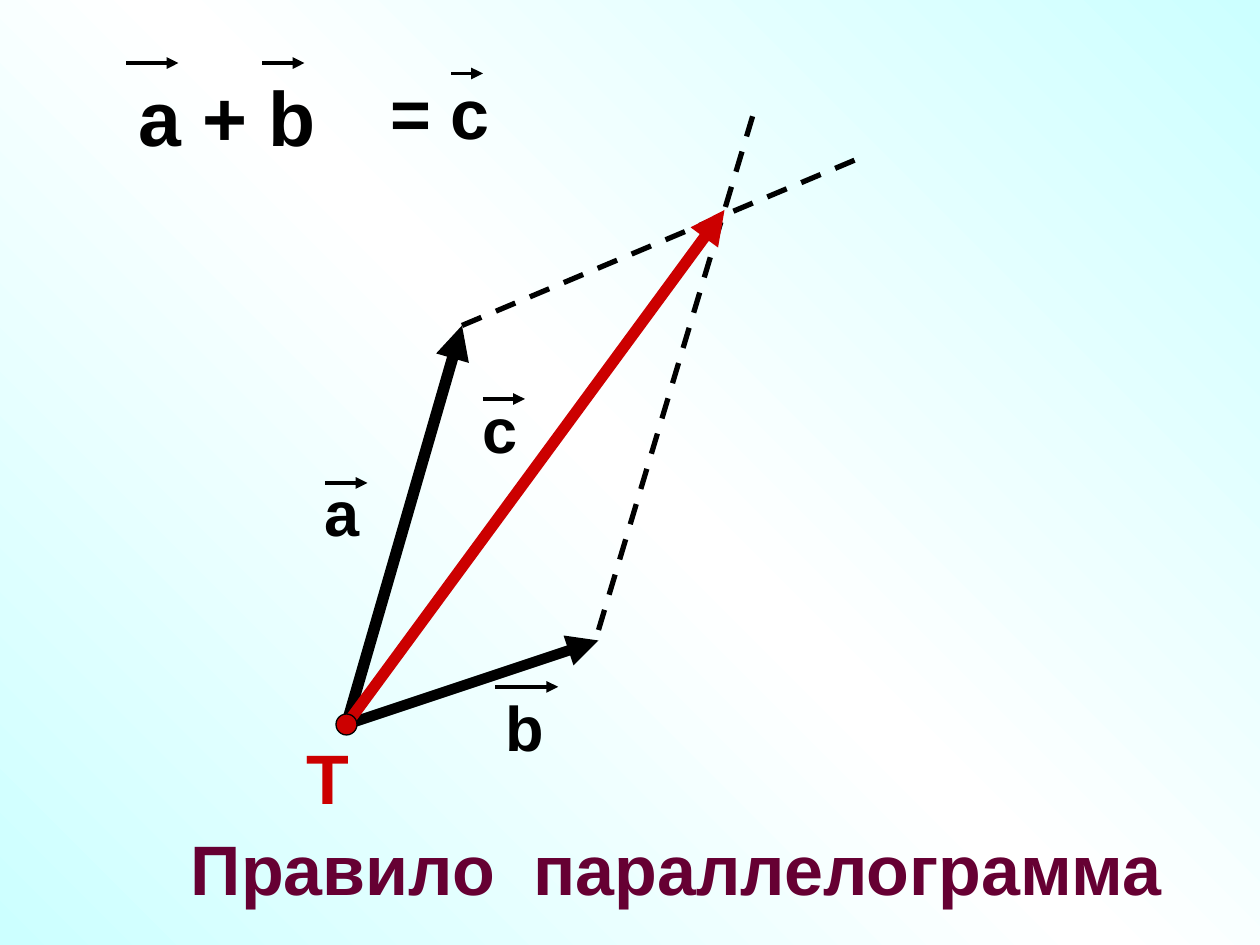
from copy import deepcopy

from lxml import etree
from pptx import Presentation
from pptx.dml.color import RGBColor
from pptx.enum.dml import MSO_LINE
from pptx.enum.shapes import MSO_CONNECTOR, MSO_SHAPE
from pptx.enum.text import MSO_AUTO_SIZE
from pptx.oxml.ns import qn
from pptx.util import Pt

STRAIGHT = MSO_CONNECTOR.STRAIGHT
OVAL = MSO_SHAPE.OVAL
DASH = MSO_LINE.DASH
GROW = MSO_AUTO_SIZE.SHAPE_TO_FIT_TEXT
HUES = {"ink": "000000", "red": "CC0000", "wine": "660033",
        "aqua": "CCFFFF", "white": "FFFFFF"}


def tint(name):
    """Return the named colour."""
    return RGBColor.from_string(HUES[name])


def paint(slide):
    """Fill the background with a diagonal three-stop gradient."""
    fill = slide.background.fill
    fill.gradient()
    fill.gradient_angle = 45
    last = fill.gradient_stops[1]
    stops = fill.gradient_stops[0]._gs.getparent()
    stops.append(deepcopy(last._gs))
    for stop, (place, hue) in zip(
            fill.gradient_stops, [(0, "aqua"), (0.5, "white"), (1, "aqua")]):
        stop.position = place
        stop.color.rgb = tint(hue)


def write(shapes, text, box, size=36, hue="ink"):
    """Place one line of bold text in a box."""
    shape = shapes.add_textbox(*map(Pt, box))
    frame = shape.text_frame
    frame.word_wrap = False
    frame.auto_size = GROW
    run = frame.paragraphs[0].add_run()
    run.text = text
    font = run.font
    font.name, font.size, font.bold = "Arial", Pt(size), True
    font.color.rgb = tint(hue)


def rule(shapes, start, end, width=2.25, hue="ink", dash=None, head=True):
    """Draw a straight line, dashed or with an arrowhead."""
    line = shapes.add_connector(STRAIGHT, *map(Pt, (*start, *end)))
    line.line.width = Pt(width)
    line.line.color.rgb = tint(hue)
    if dash:
        line.line.dash_style = dash
    if head:
        etree.SubElement(line.line._get_or_add_ln(), qn("a:tailEnd"), type="triangle")
    etree.SubElement(line._element.spPr, qn("a:effectLst"))


def label(slide, text, box, bars, size=36):
    """Group a text with vector bars given as offset and length in its box."""
    shapes = slide.shapes.add_group_shape().shapes
    write(shapes, text, box, size=size)
    left, top = box[:2]
    for x, y, length in bars:
        rule(shapes, (left + x, top + y), (left + x + length, top + y))


def figure(slide, left, top):
    """Draw the parallelogram of vectors around its origin T."""
    shapes = slide.shapes

    def at(x, y):
        """Shift a point to the origin."""
        return left + x, top + y

    rule(shapes, at(0, 0), at(66, -228), width=6.5)
    rule(shapes, at(0, 0), at(144, -48), width=6)
    for start, end in [((66, -228), (294, -324)), ((144, -54), (234, -354))]:
        rule(shapes, at(*start), at(*end), width=3, dash=DASH, head=False)
    rule(shapes, at(0, 0), at(216, -294), width=6.5, hue="red")
    write(shapes, "T", (*at(-30, 2), 39, 55.5), size=40, hue="red")
    dot = shapes.add_shape(OVAL, *map(Pt, (*at(-6, -6), 12, 12)))
    dot.shadow.inherit = False
    dot.fill.solid()
    dot.fill.fore_color.rgb = tint("red")
    dot.line.color.rgb = tint("ink")
    dot.line.width = Pt(0.75)
    for text, x, y, width, bar in [
            ("a", -19.5, -147, 34.5, (7.5, 9, 24)),
            ("b", 84, -24, 36.5, (1, 2.5, 36)),
            ("c", 70.5, -194.5, 34.5, (7.5, 8.5, 24))]:
        label(slide, text, (*at(x, y), width, 50.5), [bar])


def sum_up(slide, left, top):
    """Write the vector sum."""
    label(slide, "a + b", (left, top, 116, 60), [(0, 0, 30), (78, 0, 24)], size=44)
    label(slide, "= c", (left + 144, top, 71, 55.5), [(42, 6, 18)], size=40)


def main():
    """Build the slide and save it."""
    deck = Presentation()
    deck.slide_width, deck.slide_height = Pt(720), Pt(540)
    slide = deck.slides.add_slide(deck.slide_layouts[6])
    paint(slide)
    figure(slide, 198, 414)
    write(slide.shapes, "Правило  параллелограмма", (102, 468, 571.5, 55.5),
          size=40, hue="wine")
    sum_up(slide, 72, 36)
    deck.save("out.pptx")


if __name__ == "__main__":
    main()
